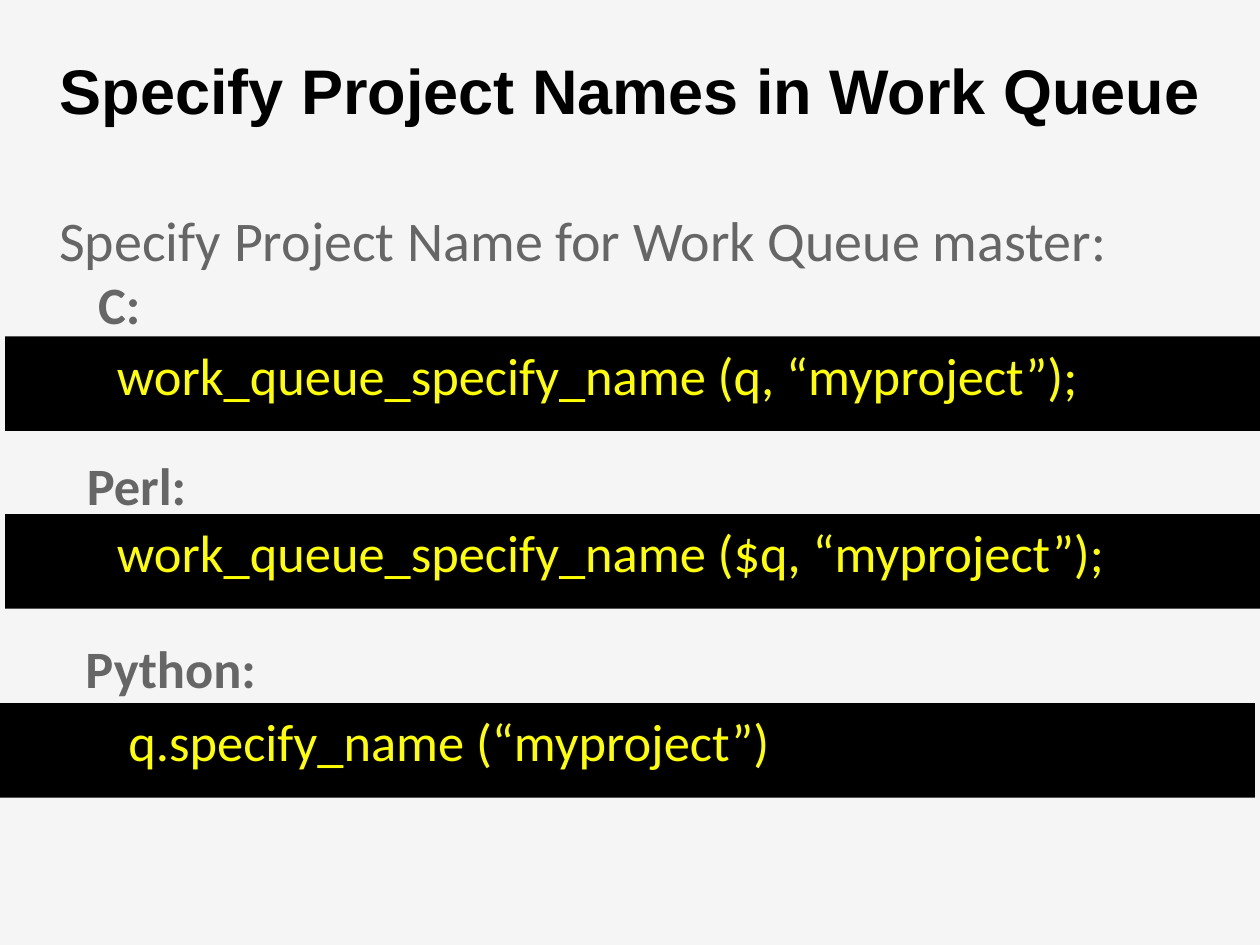
from pptx import Presentation
from pptx import util as u
from pptx.dml.color import RGBColor
from pptx.enum import shapes, text
from pptx.oxml.ns import qn
from lxml import etree

BACKGROUND = RGBColor(0xF5, 0xF5, 0xF5)
BLACK = RGBColor(0, 0, 0)
GRAY = RGBColor(0x66, 0x66, 0x66)
YELLOW = RGBColor(0xFF, 0xFF, 0)


class SlideBuilder:
    HEADING_FONT = "Arial"
    BODY_FONT = "Calibri"

    def __init__(self, slide):
        self.slide = slide
        fill = slide.background.fill
        fill.solid()
        fill.fore_color.rgb = BACKGROUND

    def place(self, shape, left, top, width, height):
        shape.left, shape.top = u.Inches(left), u.Inches(top)
        shape.width, shape.height = u.Inches(width), u.Inches(height)

    def set_words(self, shape, words, size, color, bold=False, font=BODY_FONT,
                  align=text.PP_ALIGN.LEFT):
        frame = shape.text_frame
        frame.text = words
        frame.word_wrap = True
        frame.auto_size = text.MSO_AUTO_SIZE.NONE
        frame.vertical_anchor = text.MSO_ANCHOR.TOP
        paragraph = frame.paragraphs[0]
        paragraph.alignment = align
        paragraph.space_before = u.Pt(0)
        style = paragraph.runs[0].font
        style.name, style.size, style.bold = font, u.Pt(size), bold
        style.color.rgb = color

    def title(self, words, *box):
        shape = self.slide.shapes.title
        self.place(shape, *box)
        self.set_words(shape, words, 36, BLACK, True, self.HEADING_FONT,
                       text.PP_ALIGN.CENTER)

    def body(self, words, *box):
        shape = self.slide.placeholders[1]
        self.place(shape, *box)
        self.set_words(shape, words, 32, GRAY)
        # Hanging indent without a bullet
        properties = shape.text_frame.paragraphs[0]._p.get_or_add_pPr()
        properties.set("marL", str(u.Inches(0.38)))
        properties.set("indent", str(u.Inches(-0.38)))
        etree.SubElement(properties, qn("a:buNone"))

    def text_box(self, words, left, top, width, height, color, bold=False):
        box = self.slide.shapes.add_textbox(
            *map(u.Inches, (left, top, width, height)))
        self.set_words(box, words, 30, color, bold)

    def code_bar(self, left, top):
        bar = self.slide.shapes.add_shape(
            shapes.MSO_SHAPE.RECTANGLE,
            *map(u.Inches, (left, top, 9.96, 0.75)))
        bar.shadow.inherit = False
        bar.fill.solid()
        bar.fill.fore_color.rgb = BLACK
        bar.line.fill.background()

    def example(self, language, label_left, label_top, code, code_left,
                bar_left, bar_top):
        self.code_bar(bar_left, bar_top)
        self.text_box(language, label_left, label_top, 3.58, 0.6, GRAY, True)
        self.text_box(code, code_left, bar_top, 10 - code_left, 0.66, YELLOW)


def main():
    presentation = Presentation()
    presentation.slide_width = u.Inches(10)
    presentation.slide_height = u.Inches(7.5)
    slide = presentation.slides.add_slide(presentation.slide_layouts[1])
    builder = SlideBuilder(slide)

    # Heading and lead line
    builder.title("Specify Project Names in Work Queue", 0, 0.36, 10, 0.66)
    builder.body("Specify Project Name for Work Queue master:",
                 0.37, 1.58, 9.46, 0.78)

    # One labelled code bar per language
    examples = [
        ("C:", 0.68, 2.11, "work_queue_specify_name (q, “myproject”);",
         0.83, 0.04, 2.67),
        ("Perl:", 0.59, 3.55, "work_queue_specify_name ($q, “myproject”);",
         0.83, 0.04, 4.08),
        ("Python:", 0.58, 5, "q.specify_name (“myproject”)",
         0.92, 0, 5.58),
    ]
    for example in examples:
        builder.example(*example)

    presentation.save("out.pptx")


if __name__ == "__main__":
    main()
